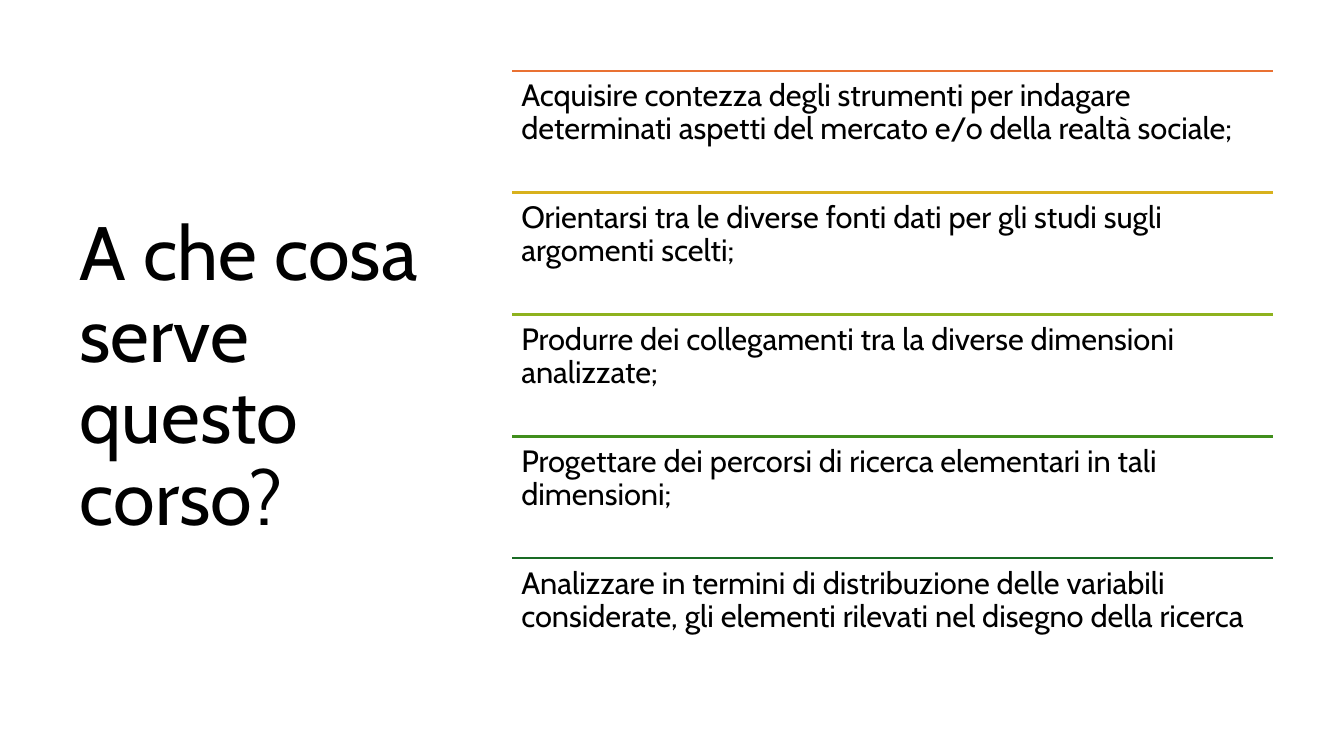
import pptx
import pptx.dml.color
import pptx.enum.shapes
import pptx.enum.text
import pptx.oxml.ns
import pptx.util
from lxml import etree
from pptx.dml.color import RGBColor
from pptx.util import Inches

BLACK = RGBColor(0x00, 0x00, 0x00)
ORANGE = RGBColor(0xE9, 0x71, 0x32)
GOLD = RGBColor(0xD8, 0xB1, 0x1D)
LIME = RGBColor(0x8E, 0xB2, 0x1E)
GREEN = RGBColor(0x40, 0x8E, 0x1C)
DARK_GREEN = RGBColor(0x19, 0x6B, 0x24)

GOALS = [
    (ORANGE, "Acquisire contezza degli strumenti per indagare determinati aspetti "
             "del mercato e/o della realtà sociale;"),
    (GOLD, "Orientarsi tra le diverse fonti dati per gli studi sugli argomenti scelti;"),
    (LIME, "Produrre dei collegamenti tra la diverse dimensioni analizzate;"),
    (GREEN, "Progettare dei percorsi di ricerca elementari in tali dimensioni;"),
    (DARK_GREEN, "Analizzare in termini di distribuzione delle variabili considerate, "
                 "gli elementi rilevati nel disegno della ricerca"),
]
GOALS_LEFT, GOALS_TOP = 5.08, 0.7
GOAL_WIDTH, GOAL_HEIGHT = 7.55, 1.21


class SlideBuilder:
    font_name = "Cabin"
    title_size = 54
    goal_size = 22
    line_spacing = 0.9
    inset = Inches(0.09)

    def __init__(self, slide):
        self.slide = slide

    def set_text(self, shape, text, size, anchor):
        text_frame = shape.text_frame
        text_frame.word_wrap = True
        text_frame.auto_size = pptx.enum.text.MSO_AUTO_SIZE.NONE
        text_frame.vertical_anchor = anchor
        text_frame.text = text
        paragraph = text_frame.paragraphs[0]
        paragraph.alignment = pptx.enum.text.PP_ALIGN.LEFT
        paragraph.line_spacing = self.line_spacing
        font = paragraph.runs[0].font
        font.name = self.font_name
        font.size = pptx.util.Pt(size)
        font.color.rgb = BLACK

    def title(self, text, left, top, width, height):
        shape = self.slide.shapes.title
        shape.left, shape.top = Inches(left), Inches(top)
        shape.width, shape.height = Inches(width), Inches(height)
        self.set_text(shape, text, self.title_size, pptx.enum.text.MSO_ANCHOR.MIDDLE)

    def rule(self, color, left, top, width):
        connector = self.slide.shapes.add_connector(
            pptx.enum.shapes.MSO_CONNECTOR.STRAIGHT,
            Inches(left), Inches(top), Inches(left + width), Inches(top))
        connector.line.color.rgb = color
        connector.line.width = pptx.util.Pt(1.5)
        etree.SubElement(connector._element.spPr, pptx.oxml.ns.qn("a:effectLst"))

    def goal(self, text, left, top, width, height):
        box = self.slide.shapes.add_textbox(
            Inches(left), Inches(top), Inches(width), Inches(height))
        text_frame = box.text_frame
        text_frame.margin_left = text_frame.margin_right = self.inset
        text_frame.margin_top = text_frame.margin_bottom = self.inset
        self.set_text(box, text, self.goal_size, pptx.enum.text.MSO_ANCHOR.TOP)


def main():
    presentation = pptx.Presentation()
    presentation.slide_width = Inches(13.33)
    presentation.slide_height = Inches(7.5)
    title_only = presentation.slide_layouts.get_by_name("Title Only")
    builder = SlideBuilder(presentation.slides.add_slide(title_only))

    builder.title("A che cosa serve questo corso?", 0.69, 0.7, 3.74, 6.11)
    for index, (color, text) in enumerate(GOALS):
        top = GOALS_TOP + index * GOAL_HEIGHT
        builder.rule(color, GOALS_LEFT, top, GOAL_WIDTH)
        builder.goal(text, GOALS_LEFT, top, GOAL_WIDTH, GOAL_HEIGHT)

    presentation.save("out.pptx")


if __name__ == "__main__":
    main()
